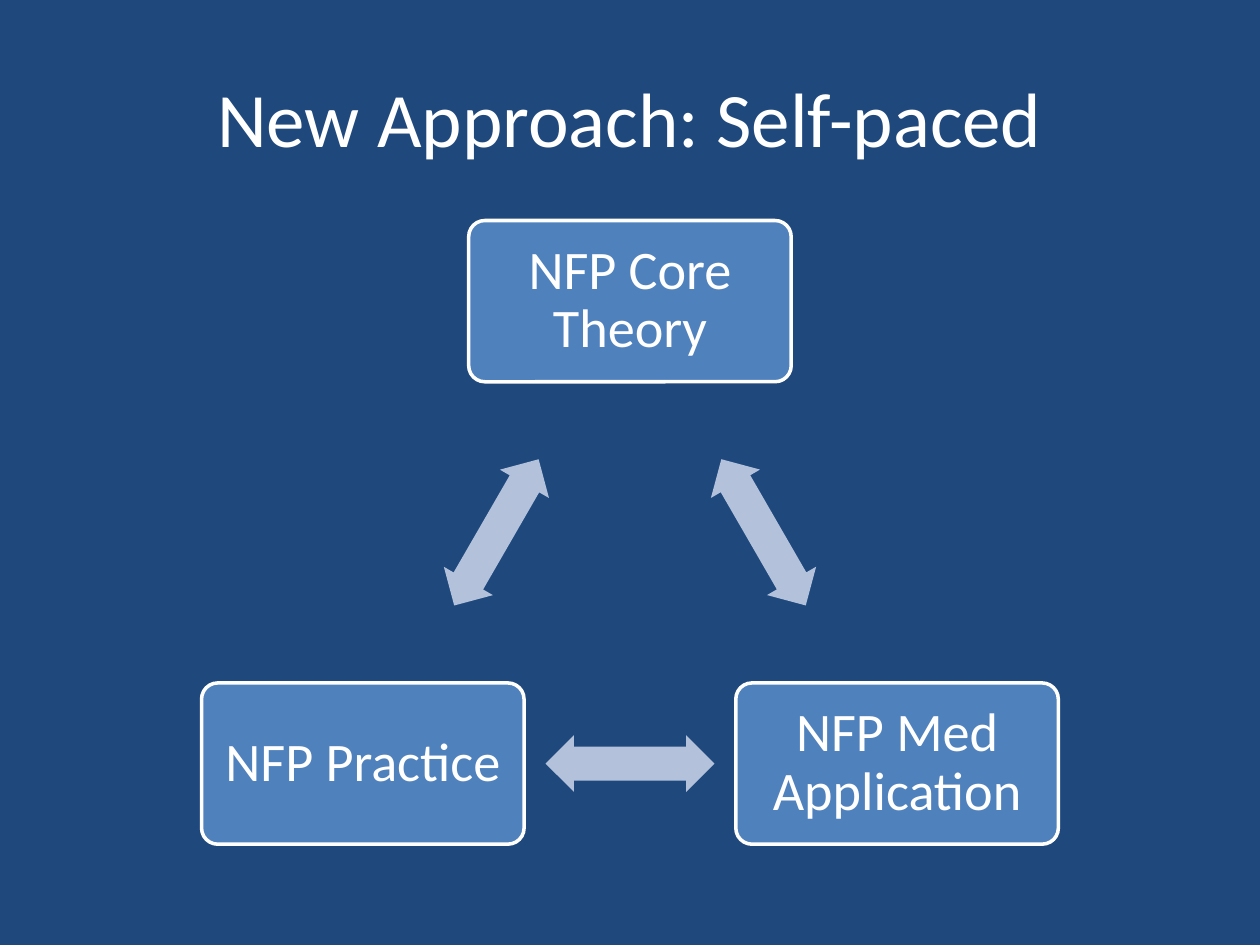
"""Build a slide with a triangle cycle of three linked learning parts."""
from pptx import Presentation
from pptx.dml.color import RGBColor
from pptx.enum.shapes import MSO_SHAPE
from pptx.enum.text import MSO_ANCHOR, PP_ALIGN
from pptx.util import Inches, Pt

ROUND_RECT, ARROW = MSO_SHAPE.ROUNDED_RECTANGLE, MSO_SHAPE.LEFT_RIGHT_ARROW
MIDDLE, CENTER = MSO_ANCHOR.MIDDLE, PP_ALIGN.CENTER
COLORS = {"back": "1F497D", "box": "4F81BD", "arrow": "B3C1DB", "white": "FFFFFF"}
RGB = {name: RGBColor.from_string(value) for name, value in COLORS.items()}
FONT = "Calibri"
WIDTH, HEIGHT = 10, 7.5
BOX_W, BOX_H = 2.56, 1.28
ARROW_W, ARROW_H = 1.34, 0.45
MID_X, TOP_Y, BOTTOM_Y, SPREAD = WIDTH / 2, 2.39, 6.06, 2.12


def add_centered(kind, x, y, w, h, color):
    sp = s.shapes.add_shape(kind, Inches(x - w / 2), Inches(y - h / 2), Inches(w), Inches(h))
    sp.shadow.inherit = False
    sp.fill.solid()
    sp.fill.fore_color.rgb = RGB[color]
    return sp


def write(tf, text, size):
    tf.word_wrap = True
    tf.vertical_anchor = MIDDLE
    p = tf.paragraphs[0]
    p.alignment = CENTER
    r = p.add_run()
    r.text = text
    r.font.name, r.font.size = FONT, Pt(size)
    r.font.color.rgb = RGB["white"]
    return p


prs = Presentation()
prs.slide_width, prs.slide_height = Inches(WIDTH), Inches(HEIGHT)
s = prs.slides.add_slide(prs.slide_layouts[5])
s.background.fill.solid()
s.background.fill.fore_color.rgb = RGB["back"]

title = s.shapes.title
title.left, title.top = Inches(WIDTH * 0.05), Inches(HEIGHT * 0.04)
title.width, title.height = Inches(WIDTH * 0.9), Inches(1.25)
write(title.text_frame, "New Approach: Self-paced", 44)

parts = [
    ("NFP Core Theory", MID_X, TOP_Y),
    ("NFP Med Application", MID_X + SPREAD, BOTTOM_Y),
    ("NFP Practice", MID_X - SPREAD, BOTTOM_Y),
]
for i, (text, x, y) in enumerate(parts):
    sp = add_centered(ROUND_RECT, x, y, BOX_W, BOX_H, "box")
    sp.adjustments[0] = 0.1
    sp.line.color.rgb = RGB["white"]
    sp.line.width = Pt(2)
    tf = sp.text_frame
    tf.margin_left = tf.margin_right = tf.margin_top = tf.margin_bottom = Inches(0.13)
    p = write(tf, text, 31)
    p.line_spacing = 0.9

    _, next_x, next_y = parts[(i + 1) % len(parts)]
    sp = add_centered(ARROW, (x + next_x) / 2, (y + next_y) / 2, ARROW_W, ARROW_H, "arrow")
    sp.adjustments[0], sp.adjustments[1] = 0.6, 0.5
    sp.rotation = 60 + 120 * i
    sp.line.fill.background()

prs.save("out.pptx")
